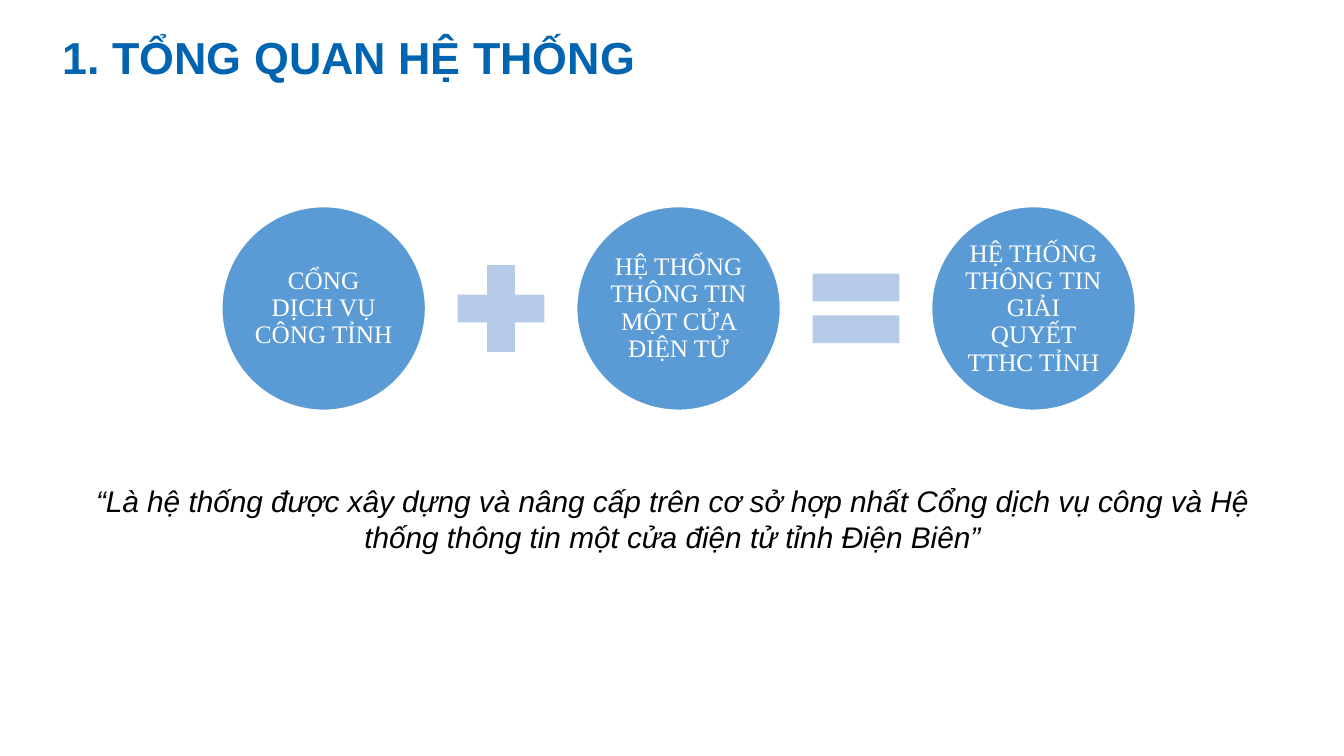
from pptx import Presentation
from pptx.dml.color import RGBColor
from pptx.enum.shapes import MSO_SHAPE
from pptx.enum.text import MSO_ANCHOR, PP_ALIGN
from pptx.util import Inches, Pt

TITLE = "1. TỔNG QUAN HỆ THỐNG"
SYSTEMS = [
    "CỔNG DỊCH VỤ CÔNG TỈNH",
    "HỆ THỐNG THÔNG TIN MỘT CỬA ĐIỆN TỬ",
    "HỆ THỐNG THÔNG TIN GIẢI QUYẾT TTHC TỈNH",
]
OPERATORS = [MSO_SHAPE.MATH_PLUS, MSO_SHAPE.MATH_EQUAL]
SUMMARY = (
    "“Là hệ thống được xây dựng và nâng cấp trên cơ sở hợp nhất Cổng dịch vụ công "
    "và Hệ thống thông tin một cửa điện tử tỉnh Điện Biên”"
)

THEME = {
    "circle": RGBColor(0x5B, 0x9B, 0xD5),
    "operator": RGBColor(0xB5, 0xCB, 0xE7),
    "outline": RGBColor(0xFF, 0xFF, 0xFF),
    "title": {"name": "Arial", "size": Pt(32), "bold": True,
              "color": RGBColor(0x00, 0x64, 0xB1)},
    "system": {"name": "Times New Roman", "size": Pt(18),
               "color": RGBColor(0xFF, 0xFF, 0xFF)},
    "summary": {"name": "Arial", "size": Pt(21.3), "italic": True,
                "color": RGBColor(0x00, 0x00, 0x00)},
}

ROW_LEFT, ROW_MIDDLE = 2.2, 3.06
CIRCLE, OPERATOR, GAP = 2.02, 1.17, 0.165
STEP = CIRCLE + OPERATOR + 2 * GAP


def write(shape, text, style, frame_format, paragraph_format):
    frame = shape.text_frame
    frame.text = text
    paragraph = frame.paragraphs[0]
    for target, values in ((frame, frame_format), (paragraph, paragraph_format)):
        for name, value in values.items():
            setattr(target, name, value)
    for name, value in style.items():
        if name == "color":
            paragraph.font.color.rgb = value
        else:
            setattr(paragraph.font, name, value)


def add_symbol(slide, kind, left, size, color):
    shape = slide.shapes.add_shape(
        kind, Inches(left), Inches(ROW_MIDDLE - size / 2), Inches(size), Inches(size))
    shape.shadow.inherit = False
    shape.fill.solid()
    shape.fill.fore_color.rgb = color
    shape.line.fill.background()
    return shape


def add_system(slide, text, left):
    circle = add_symbol(slide, MSO_SHAPE.OVAL, left, CIRCLE, THEME["circle"])
    circle.line.color.rgb = THEME["outline"]
    circle.line.width = Pt(1)
    margins = {f"margin_{side}": Inches(0.03) for side in ("left", "top", "right", "bottom")}
    write(circle, text, THEME["system"],
          {"word_wrap": True, "vertical_anchor": MSO_ANCHOR.MIDDLE, **margins},
          {"alignment": PP_ALIGN.CENTER, "line_spacing": 0.9})


def main():
    presentation = Presentation()
    presentation.slide_width = Inches(13.33)
    presentation.slide_height = Inches(7.5)
    slide = presentation.slides.add_slide(presentation.slide_layouts[5])

    title = slide.shapes.title
    title.left, title.top, title.width, title.height = map(Inches, (0.52, 0.32, 9.02, 0.55))
    write(title, TITLE, THEME["title"],
          {"word_wrap": True, "vertical_anchor": MSO_ANCHOR.MIDDLE},
          {"alignment": PP_ALIGN.LEFT, "line_spacing": 0.9})

    for index, text in enumerate(SYSTEMS):
        add_system(slide, text, ROW_LEFT + index * STEP)
    for index, kind in enumerate(OPERATORS):
        left = ROW_LEFT + index * STEP + CIRCLE + GAP
        add_symbol(slide, kind, left, OPERATOR, THEME["operator"])

    summary = slide.shapes.add_textbox(*map(Inches, (0.8, 4.74, 11.74, 0.82)))
    write(summary, SUMMARY, THEME["summary"],
          {"word_wrap": True}, {"alignment": PP_ALIGN.CENTER})

    presentation.save("out.pptx")


if __name__ == "__main__":
    main()
